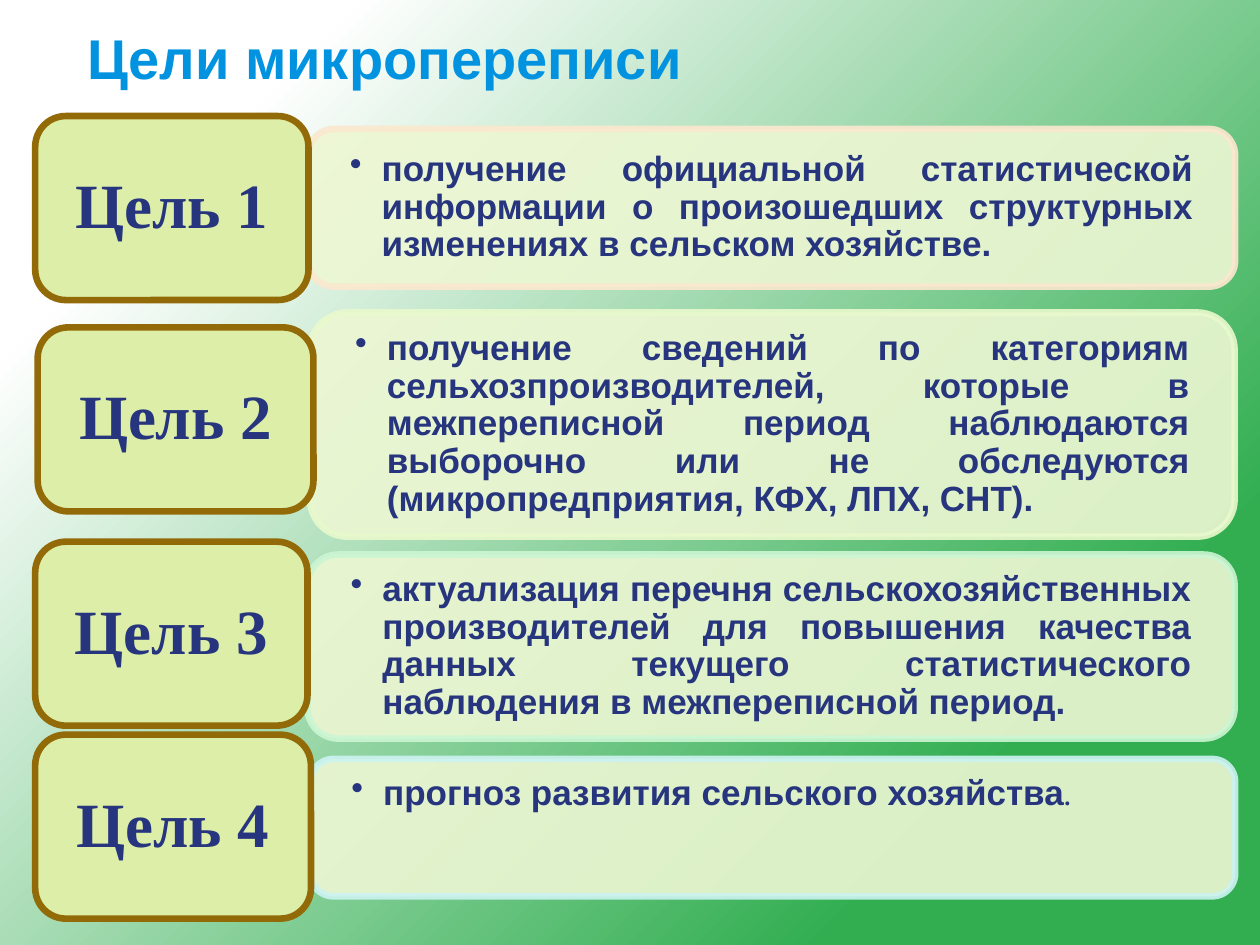
from dataclasses import dataclass

from lxml import etree
from pptx import Presentation
from pptx import util as u
from pptx.dml.color import RGBColor
from pptx.enum import shapes, text
from pptx.oxml.ns import qn


@dataclass(frozen=True)
class Theme:
    back_start: str = "FFFFFF"
    back_end: str = "32AE51"
    title: str = "0293E0"
    ink: str = "26357D"
    panel: str = "EDF7D3"
    tag: str = "DCEEA7"
    tag_line: str = "936A08"
    sans: str = "Arial"
    serif: str = "Times New Roman"
    title_size: float = 32
    tag_size: float = 36
    body_size: float = 20
    stop_size: float = 14
    line_width: float = 3.78
    opacity: int = 90


@dataclass(frozen=True)
class Area:
    """Position and size in centimetres."""
    left: float
    top: float
    width: float
    height: float


@dataclass(frozen=True)
class Goal:
    label: str
    wording: str
    panel: Area
    tag: Area
    outline: str
    small_stop: str = ""
    at_top: bool = False


THEME = Theme()
TAG_HEIGHT = 3.71
GOALS = [
    Goal("Цель 1",
         "получение официальной статистической информации о произошедших "
         "структурных изменениях в сельском хозяйстве.",
         Area(6.21, 2.6, 18.69, 3.18), Area(0.71, 2.34, 5.51, TAG_HEIGHT), "FBE8CF"),
    Goal("Цель 2",
         "получение сведений по категориям сельхозпроизводителей, которые в "
         "межпереписной период наблюдаются выборочно или не обследуются "
         "(микропредприятия, КФХ, ЛПХ, СНТ).",
         Area(6.25, 6.3, 18.64, 4.52), Area(0.76, 6.6, 5.56, TAG_HEIGHT), "E9F9CD"),
    Goal("Цель 3",
         "актуализация перечня сельскохозяйственных производителей для повышения "
         "качества данных текущего статистического наблюдения в межпереписной период.",
         Area(6.2, 11.18, 18.69, 3.71), Area(0.71, 10.92, 5.49, TAG_HEIGHT), "CCF6D3"),
    Goal("Цель 4", "прогноз развития сельского хозяйства",
         Area(6.26, 15.3, 18.64, 2.77), Area(0.71, 14.81, 5.56, TAG_HEIGHT), "CCF3F1",
         small_stop=".", at_top=True),
]


def write(para, wording: str, *, size: float, font: str = THEME.sans,
          color: str = THEME.ink, align=text.PP_ALIGN.LEFT) -> None:
    """Add one bold span and set the format of its paragraph."""
    para.alignment = align
    para.line_spacing = 0.9
    span = para.add_run()
    span.text = wording
    span.font.size = u.Pt(size)
    span.font.name = font
    span.font.bold = True
    span.font.color.rgb = RGBColor.from_string(color)


def add_bullet(para, indent: float) -> None:
    properties = para._p.get_or_add_pPr()
    properties.set("marL", str(u.Cm(indent)))
    properties.set("indent", str(-u.Cm(indent)))
    etree.SubElement(properties, qn("a:buChar"), char="•")


def set_opacity(fill_parent, percent: int) -> None:
    color = fill_parent.find(qn("a:solidFill")).find(qn("a:srgbClr"))
    etree.SubElement(color, qn("a:alpha"), val=str(percent * 1000))


def add_box(page, area: Area, fill: str, outline: str, inset_x: float, inset_y: float):
    box = page.shapes.add_shape(
        shapes.MSO_SHAPE.ROUNDED_RECTANGLE, u.Cm(area.left), u.Cm(area.top),
        u.Cm(area.width), u.Cm(area.height))
    box.shadow.inherit = False
    box.fill.solid()
    box.fill.fore_color.rgb = RGBColor.from_string(fill)
    box.line.color.rgb = RGBColor.from_string(outline)
    box.line.width = u.Pt(THEME.line_width)
    frame = box.text_frame
    frame.word_wrap = True
    frame.vertical_anchor = text.MSO_ANCHOR.MIDDLE
    frame.margin_left = frame.margin_right = u.Cm(inset_x)
    frame.margin_top = frame.margin_bottom = u.Cm(inset_y)
    return box


def add_panel(page, goal: Goal) -> None:
    box = add_box(page, goal.panel, THEME.panel, goal.outline, 0.69, 0.36)
    properties = box._element.spPr
    set_opacity(properties, THEME.opacity)
    set_opacity(properties.find(qn("a:ln")), THEME.opacity)
    para = box.text_frame.paragraphs[0]
    align = text.PP_ALIGN.JUSTIFY
    if goal.at_top:
        box.text_frame.vertical_anchor = text.MSO_ANCHOR.TOP
        box.text_frame.margin_top = u.Cm(0.2)
        align = text.PP_ALIGN.LEFT
    write(para, goal.wording, size=THEME.body_size, align=align)
    if goal.small_stop:
        write(para, goal.small_stop, size=THEME.stop_size, font=THEME.serif, align=align)
    add_bullet(para, 0.64)


def add_tag(page, goal: Goal) -> None:
    box = add_box(page, goal.tag, THEME.tag, THEME.tag_line, 0.38, 0.18)
    write(box.text_frame.paragraphs[0], goal.label, size=THEME.tag_size,
          font=THEME.serif, align=text.PP_ALIGN.CENTER)


def paint_background(page) -> None:
    fill = page.background.fill
    fill.gradient()
    fill.gradient_angle = 315
    stops = ((0.16, THEME.back_start), (0.8, THEME.back_end))
    for stop, (position, color) in zip(fill.gradient_stops, stops):
        stop.position = position
        stop.color.rgb = RGBColor.from_string(color)


def add_title(page, wording: str) -> None:
    title = page.shapes.title
    title.left, title.top = u.Cm(1.5), u.Cm(0.33)
    title.width, title.height = u.Cm(21.89), u.Cm(1.8)
    title.text_frame.vertical_anchor = text.MSO_ANCHOR.MIDDLE
    write(title.text_frame.paragraphs[0], wording,
          size=THEME.title_size, color=THEME.title)


def main() -> None:
    deck = Presentation()
    deck.slide_width, deck.slide_height = u.Cm(25.4), u.Cm(19.05)
    page = deck.slides.add_slide(deck.slide_layouts.get_by_name("Title Only"))
    paint_background(page)
    add_title(page, "Цели микропереписи")
    for goal in GOALS:
        add_panel(page, goal)
        add_tag(page, goal)
    deck.save("out.pptx")


if __name__ == "__main__":
    main()
